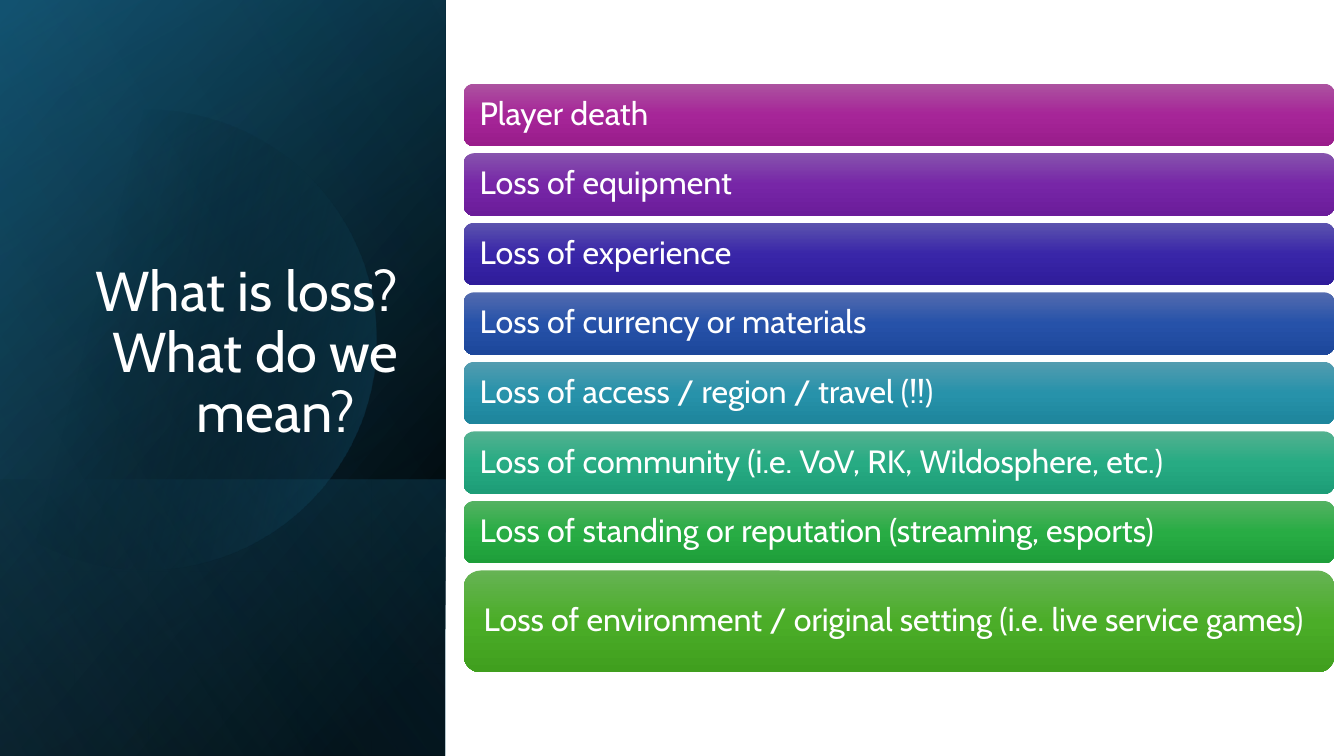
from math import acos, cos, sin

from lxml.etree import SubElement
from pptx import Presentation
from pptx.dml.color import RGBColor
from pptx.enum.shapes import MSO_SHAPE
from pptx.enum.text import MSO_ANCHOR, PP_ALIGN
from pptx.oxml.ns import qn
from pptx.util import Pt

PX = 9144
COLORS = {
    "white": "FFFFFF",
    "black": "000000",
    "deep": "104862",
    "teal": "156082",
    "sky": "46B1E1",
}
PANEL_WIDTH = 442
SLIDE_HEIGHT = 750


def fill_gradient(shape, angle, stops):
    shape.shadow.inherit = False
    shape.line.fill.background()
    shape.fill.gradient()
    gradient = shape.fill._xPr.find(qn("a:gradFill"))
    for child in list(gradient):
        gradient.remove(child)
    stop_list = SubElement(gradient, qn("a:gsLst"))
    for position, color, opacity in stops:
        stop = SubElement(stop_list, qn("a:gs"), pos=str(position * 1000))
        rgb = SubElement(stop, qn("a:srgbClr"), val=color)
        if opacity < 100:
            SubElement(rgb, qn("a:alpha"), val=str(opacity * 1000))
    SubElement(gradient, qn("a:lin"), ang=str(angle * 60000), scaled="0")


def write_text(shape, text, size, alignment, anchor):
    frame = shape.text_frame
    frame.word_wrap = True
    frame.vertical_anchor = anchor
    frame.text = text
    paragraph = frame.paragraphs[0]
    paragraph.alignment = alignment
    paragraph.line_spacing = 0.9
    font = paragraph.runs[0].font
    font.name = "Cabin"
    font.size = Pt(size)
    font.color.rgb = RGBColor.from_string(COLORS["white"])


presentation = Presentation()
presentation.slide_width = 12192000
presentation.slide_height = SLIDE_HEIGHT * PX
slide = presentation.slides.add_slide(presentation.slide_layouts[6])
shapes = slide.shapes

panel_layers = [
    (0, 220, [(8, COLORS["black"], 100), (100, COLORS["deep"], 100)]),
    (0, 240, [(0, COLORS["black"], 0), (99, COLORS["teal"], 46)]),
    (476, 140, [(2, COLORS["teal"], 29), (100, COLORS["black"], 30)]),
    (0, 150, [(0, COLORS["black"], 0), (99, COLORS["sky"], 11)]),
]
for index, (top, angle, stops) in enumerate(panel_layers):
    if index == 3:
        center_x, center_y, radius = 145, 337, 228
        limit = acos(-center_x / radius)
        angles = [limit * (step / 60 - 1) for step in range(121)]
        points = [
            (round((center_x + radius * cos(turn)) * PX), round((center_y + radius * sin(turn)) * PX))
            for turn in angles
        ]
        builder = shapes.build_freeform(*points[0])
        builder.add_line_segments(points[1:], close=True)
        circle = builder.convert_to_shape()
        fill_gradient(circle, 14, [(29, COLORS["black"], 0), (100, COLORS["teal"], 43)])
    layer = shapes.add_shape(
        MSO_SHAPE.RECTANGLE, 0, top * PX, PANEL_WIDTH * PX, (SLIDE_HEIGHT - top) * PX
    )
    fill_gradient(layer, angle, stops)

title = shapes.add_textbox(64 * PX, 184 * PX, 341 * PX, 262 * PX)
write_text(title, "What is loss? What do we mean?\t", 40, PP_ALIGN.RIGHT, MSO_ANCHOR.BOTTOM)

losses = [
    ("Player death", "AC53A0", "A62598", "991C8B"),
    ("Loss of equipment", "8653AD", "7726A7", "6B1C9A"),
    ("Loss of experience", "5C53AE", "3926A8", "2F1C9A"),
    ("Loss of currency or materials", "536BAF", "2652A9", "1D479B"),
    ("Loss of access / region / travel (!!)", "539CB0", "2792AA", "1D859C"),
    ("Loss of community (i.e. VoV, RK, Wildosphere, etc.)", "53B190", "27AB83", "1D9D77"),
    ("Loss of standing or reputation (streaming, esports)", "54B262", "28AC44", "1E9E3A"),
    ("Loss of environment / original setting (i.e. live service games)", "66B354", "4BAD28", "409F1E"),
]
for index, (text, light, middle, dark) in enumerate(losses):
    is_last = index == len(losses) - 1
    height = 101 if is_last else 62
    bar = shapes.add_shape(
        MSO_SHAPE.ROUNDED_RECTANGLE, 460 * PX, (83 + index * 69) * PX, 864 * PX, height * PX
    )
    fill_gradient(bar, 90, [(0, light, 100), (50, middle, 100), (100, dark, 100)])
    write_text(bar, text, 23, PP_ALIGN.LEFT, MSO_ANCHOR.MIDDLE)
    inset = (15 if is_last else 13) * PX
    bar.text_frame.margin_left = bar.text_frame.margin_right = inset

presentation.save("out.pptx")
